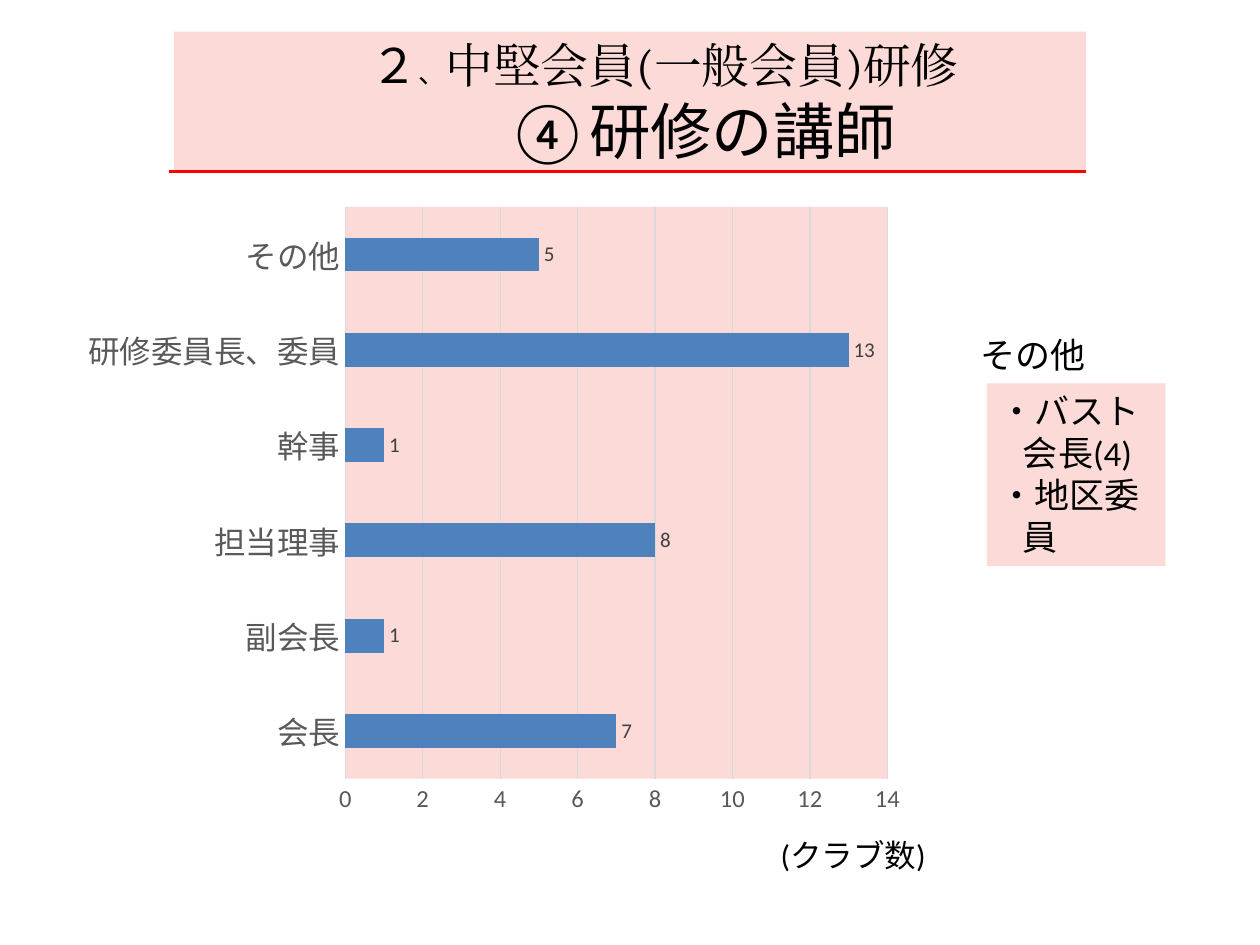
from lxml.etree import SubElement
from pptx import Presentation
from pptx.chart.data import CategoryChartData
from pptx.dml.color import RGBColor
from pptx.enum.chart import XL_CHART_TYPE, XL_LABEL_POSITION, XL_TICK_MARK
from pptx.enum.shapes import MSO_CONNECTOR, MSO_SHAPE
from pptx.enum.text import MSO_ANCHOR, MSO_AUTO_SIZE, PP_ALIGN
from pptx.oxml import parse_xml
from pptx.oxml.ns import nsdecls, qn
from pptx.util import Pt

PINK = RGBColor(0xFB, 0xDA, 0xD7)
RED = RGBColor(0xFF, 0x00, 0x00)
BLUE = RGBColor(0x4F, 0x81, 0xBD)
BLACK = RGBColor(0x00, 0x00, 0x00)
AXIS_GRAY = RGBColor(0x59, 0x59, 0x59)
LABEL_GRAY = RGBColor(0x40, 0x40, 0x40)
GRID_GRAY = RGBColor(0xD9, 0xD9, 0xD9)

LATIN = "Calibri"
JAPANESE = "Noto Sans CJK JP"
CLUB_COUNTS = {"会長": 7, "副会長": 1, "担当理事": 8, "幹事": 1,
               "研修委員長、委員": 13, "その他": 5}


def set_attributes(target, values):
    for name, value in values.items():
        setattr(target, name, value)


def format_font(font, size, color, name=LATIN):
    set_attributes(font, {"size": Pt(size), "name": name, "bold": False})
    font.color.rgb = color


def add_run(paragraph, text, size, name=LATIN):
    run = paragraph.add_run()
    run.text = text
    format_font(run.font, size, BLACK, name)
    # Japanese characters take their font from the East Asian slot
    SubElement(run.font._element, qn("a:ea")).set("typeface", name)


def indent(paragraph, left, first_line):
    properties = paragraph._p.get_or_add_pPr()
    properties.set("marL", str(Pt(left)))
    properties.set("indent", str(Pt(first_line)))


def format_frame(frame, anchor=MSO_ANCHOR.TOP):
    set_attributes(frame, {"word_wrap": True, "auto_size": MSO_AUTO_SIZE.NONE,
                           "vertical_anchor": anchor})


def fill_solid(shape, color):
    shape.fill.solid()
    shape.fill.fore_color.rgb = color


def add_title(slide):
    title = slide.shapes.title
    set_attributes(title, {"left": Pt(99.4), "top": Pt(18),
                           "width": Pt(521.3), "height": Pt(80)})
    fill_solid(title, PINK)
    format_frame(title.text_frame, MSO_ANCHOR.MIDDLE)
    paragraph = title.text_frame.paragraphs[0]
    paragraph.alignment = PP_ALIGN.LEFT
    indent(paragraph, 183.6, -78.5)
    add_run(paragraph, "２", 27.3)
    add_run(paragraph, "、", 15.6)
    add_run(paragraph, "中堅会員(一般会員)研修", 27.3, "Cambria")
    paragraph.add_line_break()
    add_run(paragraph, "④研修の講師\u3000".replace("\u3000", "　"), 35.1)


def add_rule(slide, left, right, y):
    line = slide.shapes.add_connector(MSO_CONNECTOR.STRAIGHT,
                                      Pt(left), Pt(y), Pt(right), Pt(y))
    line.line.color.rgb = RED
    line.line.width = Pt(1.5)
    SubElement(line._element.spPr, qn("a:effectLst"))


def add_label(slide, text, size, left, top, width, height):
    box = slide.shapes.add_textbox(Pt(left), Pt(top), Pt(width), Pt(height))
    format_frame(box.text_frame)
    add_run(box.text_frame.paragraphs[0], text, size)


def add_list_box(slide, items, left, top, width, height):
    box = slide.shapes.add_shape(MSO_SHAPE.RECTANGLE, Pt(left), Pt(top),
                                 Pt(width), Pt(height))
    box.shadow.inherit = False
    fill_solid(box, PINK)
    box.line.fill.background()
    frame = box.text_frame
    format_frame(frame)
    for index, item in enumerate(items):
        paragraph = frame.add_paragraph() if index else frame.paragraphs[0]
        paragraph.alignment = PP_ALIGN.LEFT
        indent(paragraph, 13.5, -13.5)
        add_run(paragraph, item, 20)


def format_plot_area(chart, x, y, width, height):
    plot_area = chart._chartSpace.chart.plotArea
    for layout in plot_area.findall(qn("c:layout")):
        plot_area.remove(layout)
    sizes = "".join(f'<c:{tag} val="{value}"/>' for tag, value in
                    {"x": x, "y": y, "w": width, "h": height}.items())
    plot_area.insert(0, parse_xml(
        f'<c:layout {nsdecls("c")}><c:manualLayout>'
        '<c:layoutTarget val="inner"/><c:xMode val="edge"/>'
        f'<c:yMode val="edge"/>{sizes}</c:manualLayout></c:layout>'))
    plot_area.append(parse_xml(
        f'<c:spPr {nsdecls("c", "a")}><a:solidFill>'
        f'<a:srgbClr val="{PINK}"/></a:solidFill></c:spPr>'))


def add_bar_chart(slide):
    data = CategoryChartData()
    data.categories = list(CLUB_COUNTS)
    data.add_series("Series 1", list(CLUB_COUNTS.values()))
    chart = slide.shapes.add_chart(XL_CHART_TYPE.BAR_CLUSTERED, Pt(42.5), Pt(111),
                                   Pt(484), Pt(363), data).chart
    set_attributes(chart, {"has_legend": False, "has_title": False})
    format_font(chart.font, 10, BLACK)

    # Bars and their values
    plot = chart.plots[0]
    set_attributes(plot, {"gap_width": 182, "vary_by_categories": False,
                          "has_data_labels": True})
    fill_solid(plot.series[0].format, BLUE)
    set_attributes(plot.data_labels, {"show_value": True,
                                      "position": XL_LABEL_POSITION.OUTSIDE_END})
    format_font(plot.data_labels.font, 12, LABEL_GRAY)

    # Axes and gridlines
    categories, values = chart.category_axis, chart.value_axis
    for axis, size, name in ((categories, 18, JAPANESE), (values, 14, LATIN)):
        set_attributes(axis, {"major_tick_mark": XL_TICK_MARK.NONE,
                              "minor_tick_mark": XL_TICK_MARK.NONE})
        format_font(axis.tick_labels.font, size, AXIS_GRAY, name)
    set_attributes(values, {"minimum_scale": 0, "maximum_scale": 14,
                            "major_unit": 2, "has_major_gridlines": True})
    values.format.line.fill.background()
    for line in (categories.format.line, values.major_gridlines.format.line):
        line.color.rgb = GRID_GRAY
        line.width = Pt(0.75)
    format_plot_area(chart, 0.32, 0.02, 0.64, 0.9)


def main():
    presentation = Presentation()
    set_attributes(presentation, {"slide_width": Pt(720), "slide_height": Pt(540)})
    slide = presentation.slides.add_slide(presentation.slide_layouts[5])

    # Heading
    add_title(slide)
    add_rule(slide, 96.5, 620.7, 98)

    # Chart with its unit
    add_bar_chart(slide)
    add_label(slide, "(クラブ数)", 18, 439, 474, 124.5, 29)

    # What "other" stands for
    add_list_box(slide, ("・バスト会長(4)", "・地区委員"), 564, 219, 102, 104.4)
    add_label(slide, "その他", 20, 553, 187, 102, 31.5)

    presentation.save("out.pptx")


if __name__ == "__main__":
    main()
